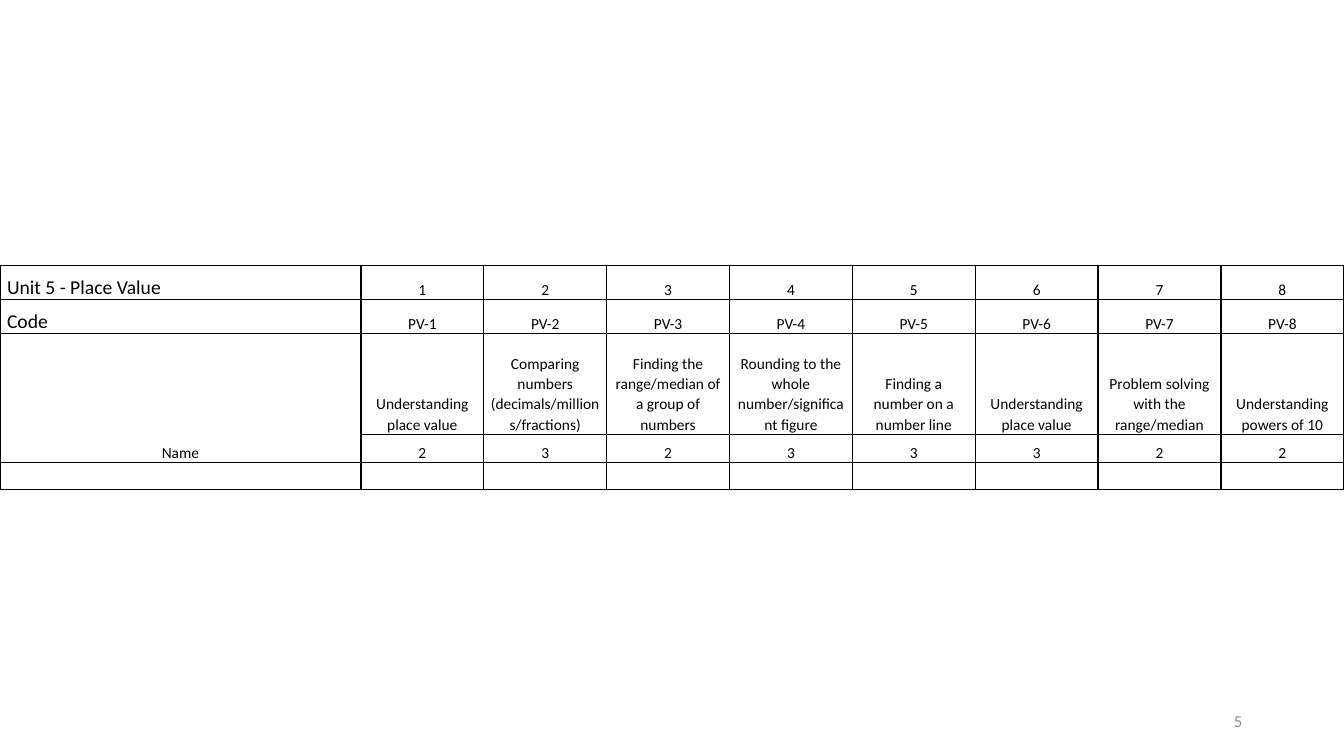
from dataclasses import dataclass

from lxml import etree
from pptx import Presentation
from pptx import util as u
from pptx.dml.color import RGBColor
from pptx.enum import text
from pptx.oxml import ns

BLACK = RGBColor(0x00, 0x00, 0x00)
GREY = RGBColor(0x8C, 0x8C, 0x8C)
FONT = "Calibri"
SLIDE_W, SLIDE_H = u.Inches(13.33), u.Inches(7.5)

# Table grid: one wide label column, then eight equal lesson columns
LABEL_W = u.Inches(3.58)
ROW_HEIGHTS = [u.Inches(h) for h in (0.34, 0.34, 1, 0.28, 0.27)]
TABLE_TOP = u.Inches(2.63)
LABEL_SIZE, BODY_SIZE = 14, 11
CELL_FORMAT = {
    "vertical_anchor": text.MSO_ANCHOR.BOTTOM,
    "margin_left": u.Inches(0.07),
    "margin_right": u.Inches(0.07),
    "margin_top": 0,
    "margin_bottom": 0,
}


@dataclass(frozen=True)
class Lesson:
    name: str
    value: int


LESSONS = [
    Lesson("Understanding place value", 2),
    Lesson("Comparing numbers (decimals/millions/fractions)", 3),
    Lesson("Finding the range/median of a group of numbers", 2),
    Lesson("Rounding to the whole number/significant figure", 3),
    Lesson("Finding a number on a number line", 3),
    Lesson("Understanding place value", 3),
    Lesson("Problem solving with the range/median", 2),
    Lesson("Understanding powers of 10", 2),
]


def add_borders(cell) -> None:
    properties = cell._tc.get_or_add_tcPr()
    for side in ("lnL", "lnR", "lnT", "lnB"):
        line = etree.SubElement(properties, ns.qn(f"a:{side}"), w=str(u.Pt(1)))
        fill = etree.SubElement(line, ns.qn("a:solidFill"))
        etree.SubElement(fill, ns.qn("a:srgbClr"), val=str(BLACK))


def write(paragraph, words: str, size: int, color: RGBColor, align) -> None:
    paragraph.alignment = align
    run = paragraph.add_run()
    run.text = words
    for key, value in {"name": FONT, "size": u.Pt(size)}.items():
        setattr(run.font, key, value)
    run.font.color.rgb = color


def fill_cell(cell, words: str, is_label: bool) -> None:
    for key, value in CELL_FORMAT.items():
        setattr(cell, key, value)
    add_borders(cell)
    cell.fill.background()
    paragraph = cell.text_frame.paragraphs[0]
    if words:
        paragraph.line_spacing = 1.07
        size = LABEL_SIZE if is_label else BODY_SIZE
        align = text.PP_ALIGN.LEFT if is_label else text.PP_ALIGN.CENTER
        write(paragraph, words, size, BLACK, align)
    else:
        # Keep empty cells from stretching their row
        etree.SubElement(paragraph._p, ns.qn("a:endParaRPr"), sz=str(BODY_SIZE * 100))


def add_unit_table(slide) -> None:
    rows = [
        ["Unit 5 - Place Value"] + [str(n) for n in range(1, len(LESSONS) + 1)],
        ["Code"] + [f"PV-{n}" for n in range(1, len(LESSONS) + 1)],
        ["Name"] + [lesson.name for lesson in LESSONS],
        [""] + [str(lesson.value) for lesson in LESSONS],
        [""] * (len(LESSONS) + 1),
    ]
    table = slide.shapes.add_table(
        len(rows), len(rows[0]), 0, TABLE_TOP, SLIDE_W, sum(ROW_HEIGHTS)
    ).table
    table.first_row = table.horz_banding = False
    lesson_w = (SLIDE_W - LABEL_W) // len(LESSONS)
    for index, column in enumerate(table.columns):
        column.width = lesson_w if index else LABEL_W
    for row, height in zip(table.rows, ROW_HEIGHTS):
        row.height = height
    for r, row_words in enumerate(rows):
        for c, words in enumerate(row_words):
            fill_cell(table.cell(r, c), words, is_label=c == 0 and r < 2)
    table.cell(2, 0).merge(table.cell(3, 0))


def add_page_number(slide) -> None:
    page_number = slide.shapes.add_textbox(
        u.Inches(9.42), u.Inches(6.95), u.Inches(3), u.Inches(0.4)
    )
    frame = page_number.text_frame
    frame.word_wrap = True
    frame.vertical_anchor = text.MSO_ANCHOR.MIDDLE
    write(frame.paragraphs[0], "5", 12, GREY, text.PP_ALIGN.RIGHT)


def main() -> None:
    deck = Presentation()
    deck.slide_width, deck.slide_height = SLIDE_W, SLIDE_H
    slide = deck.slides.add_slide(deck.slide_layouts[6])
    add_page_number(slide)
    add_unit_table(slide)
    deck.save("out.pptx")


if __name__ == "__main__":
    main()
